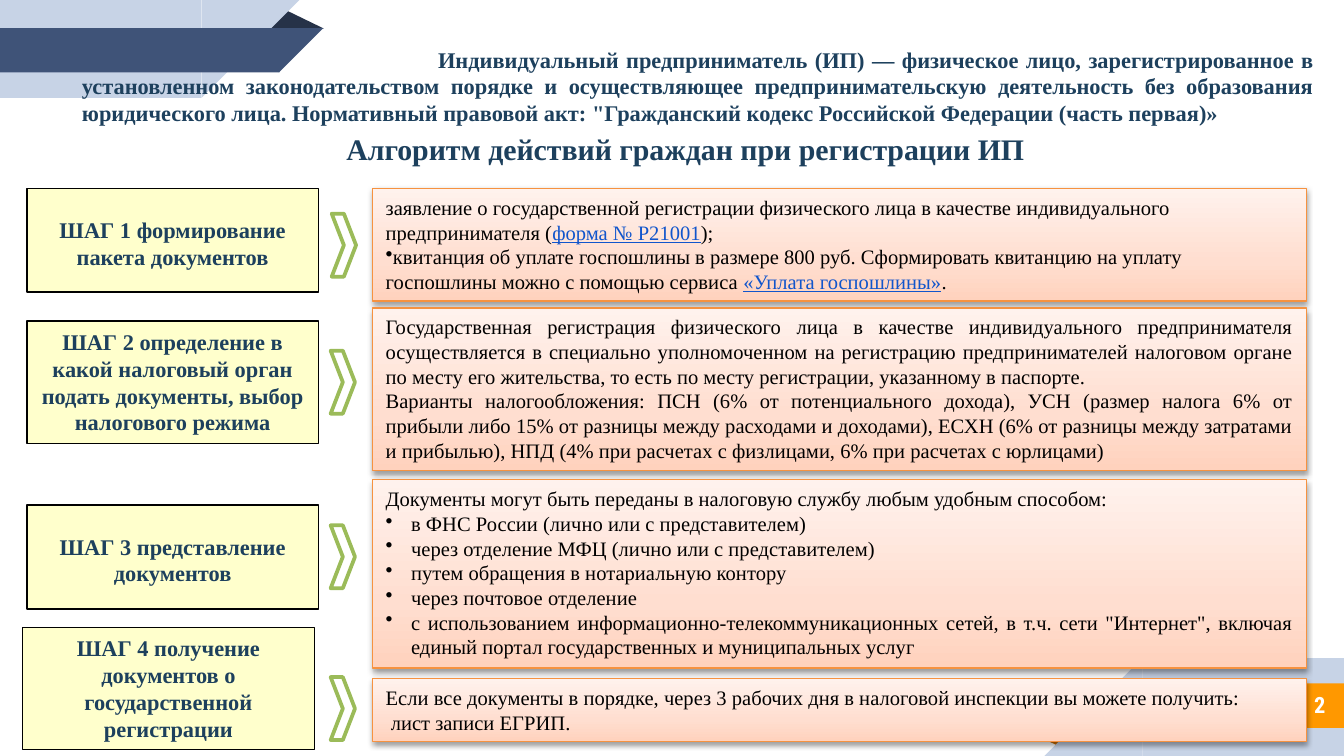
from lxml.etree import SubElement
from pptx import Presentation
from pptx.dml.color import RGBColor
from pptx.enum.shapes import MSO_SHAPE
from pptx.enum.text import MSO_ANCHOR, PP_ALIGN
from pptx.oxml.ns import qn
from pptx.util import Cm, Pt

SLIDE_W, SLIDE_H = 25.4, 14.29
SERIF = "Times New Roman"
NAVY, LINK = "1D405D", "1155CC"
STEP_W, DETAIL_LEFT, DETAIL_W = 5.51, 7.04, 17.65
BULLET_INDENT = 0.48

LEAD = (
    "Индивидуальный предприниматель (ИП) — физическое лицо, зарегистрированное в "
    "установленном законодательством порядке и осуществляющее предпринимательскую "
    "деятельность без образования юридического лица. Нормативный правовой акт: "
    '"Гражданский кодекс Российской Федерации (часть первая)»'
)
HEADING = "Алгоритм действий граждан при регистрации ИП"

# Step: left, top, height, top margin, text
STEPS = [
    (0.51, 3.56, 1.96, 0.52, "ШАГ 1 формирование пакета документов"),
    (0.51, 6.07, 2.31, 0.13,
     "ШАГ 2 определение в какой налоговый орган подать документы, выбор налогового режима"),
    (0.51, 9.55, 1.96, 0.52, "ШАГ 3 представление документов"),
    (0.43, 11.86, 2.31, 0.13, "ШАГ 4 получение документов о государственной регистрации"),
]

# Detail: top, height, alignment, paragraphs as (bullet indent or None, pieces);
# every second piece of a paragraph is styled as a link
DETAILS = [
    (3.56, 2.13, PP_ALIGN.LEFT, [
        (None, ["заявление о государственной регистрации физического лица в качестве "
                "индивидуального предпринимателя (", "форма № Р21001", ");"]),
        (0, ["квитанция об уплате госпошлины в размере 800 руб. Сформировать квитанцию "
             "на уплату госпошлины можно с помощью сервиса ", "«Уплата госпошлины»", "."]),
    ]),
    (5.82, 3.07, PP_ALIGN.JUSTIFY, [
        (None, ["Государственная регистрация физического лица в качестве индивидуального "
                "предпринимателя осуществляется в специально уполномоченном на регистрацию "
                "предпринимателей налоговом органе по месту его жительства, то есть по "
                "месту регистрации, указанному в паспорте."]),
        (None, ["Варианты налогообложения: ПСН (6% от потенциального дохода), УСН (размер "
                "налога 6% от прибыли либо 15% от разницы между расходами и доходами), ЕСХН "
                "(6% от разницы между затратами и прибылью), НПД (4% при расчетах с "
                "физлицами, 6% при расчетах с юрлицами)"]),
    ]),
    (9.07, 3.56, PP_ALIGN.JUSTIFY, [
        (None, ["Документы могут быть переданы в налоговую службу любым удобным способом:"]),
        (BULLET_INDENT, ["в ФНС России (лично или с представителем)"]),
        (BULLET_INDENT, ["через отделение МФЦ (лично или с представителем)"]),
        (BULLET_INDENT, ["путем обращения в нотариальную контору"]),
        (BULLET_INDENT, ["через почтовое отделение"]),
        (BULLET_INDENT, ["с использованием информационно-телекоммуникационных сетей, в т.ч. "
                         'сети "Интернет", включая единый портал государственных и '
                         "муниципальных услуг"]),
    ]),
    (12.83, 1.19, PP_ALIGN.LEFT, [
        (None, ["Если все документы в порядке, через 3 рабочих дня в налоговой инспекции "
                "вы можете получить:"]),
        (None, [" лист записи ЕГРИП."]),
    ]),
]

# Chevron: left, top
CHEVRONS = [(6.27, 4.04), (6.25, 6.63), (6.25, 9.93), (6.25, 12.8)]

# Corner ornament: preset, left, top, width, height, top colour, bottom colour
ORNAMENT = [
    (MSO_SHAPE.ISOSCELES_TRIANGLE, 5.03, 0.18, 1.09, 0.36, "263248", "D26F00"),
    (MSO_SHAPE.RECTANGLE, 0, 0, 3.81, 1.85, "C7D3E6", "C7D3E6"),
    (MSO_SHAPE.RIGHT_TRIANGLE, 3.81, 0, 1.85, 1.85, "C7D3E6", "C7D3E6"),
    (MSO_SHAPE.RECTANGLE, 0, 0.53, 5.28, 0.84, "3F5378", "FF9800"),
    (MSO_SHAPE.RIGHT_TRIANGLE, 5.27, 0.53, 0.84, 0.84, "3F5378", "FF9800"),
]


def rgb(code):
    return RGBColor.from_string(code)


def add_figure(slide, preset, left, top, width, height, fill, line=None, line_width=0.75):
    figure = slide.shapes.add_shape(preset, Cm(left), Cm(top), Cm(width), Cm(height))
    figure.shadow.inherit = False
    figure.fill.solid()
    figure.fill.fore_color.rgb = rgb(fill)
    if line:
        figure.line.color.rgb = rgb(line)
        figure.line.width = Pt(line_width)
    else:
        figure.line.fill.background()
    return figure


def style_runs(paragraph, size, color, bold=False, font=SERIF):
    for run in paragraph.runs:
        run.font.name = font
        run.font.size = Pt(size)
        run.font.bold = bold
        run.font.color.rgb = rgb(color)


def add_label(slide, left, top, width, height, text, size, align,
              color=NAVY, font=SERIF, anchor=MSO_ANCHOR.TOP):
    label = slide.shapes.add_textbox(Cm(left), Cm(top), Cm(width), Cm(height))
    frame = label.text_frame
    frame.word_wrap = True
    frame.vertical_anchor = anchor
    frame.text = text
    paragraph = frame.paragraphs[0]
    paragraph.alignment = align
    style_runs(paragraph, size, color, True, font)
    return paragraph


def add_corner(slide, at_bottom):
    """The bottom corner is the top one turned by half a circle."""
    for preset, left, top, width, height, top_color, bottom_color in ORNAMENT:
        is_tip = preset == MSO_SHAPE.ISOSCELES_TRIANGLE
        if at_bottom:
            left, top = SLIDE_W - left - width, SLIDE_H - top - height
        part = add_figure(slide, preset, left, top, width, height,
                          bottom_color if at_bottom else top_color)
        if is_tip:
            part.adjustments[0] = 0.32
        else:
            part._element.spPr.find(qn("a:xfrm")).set("flipH", "1")
        part.rotation = 180 if is_tip == at_bottom else 0


def add_step(slide, left, top, height, margin_top, text):
    step = add_figure(slide, MSO_SHAPE.RECTANGLE, left, top, STEP_W, height,
                      "FFFFCC", "000000")
    frame = step.text_frame
    frame.word_wrap = True
    frame.vertical_anchor = MSO_ANCHOR.TOP
    frame.margin_top = Cm(margin_top)
    frame.text = text
    frame.paragraphs[0].alignment = PP_ALIGN.CENTER
    style_runs(frame.paragraphs[0], 12, NAVY, True)


def add_color(parent, code):
    color = SubElement(parent, qn("a:srgbClr"))
    color.set("val", code)
    return color


def apply_glow_style(panel):
    # Three-stop gradient running upwards
    panel.fill.gradient()
    panel.fill.gradient_angle = 90
    stops = panel._element.spPr.find(".//" + qn("a:gsLst"))
    stops.clear()
    for position, code in [(0, "FFD2BD"), (35, "FFDED0"), (100, "FFF2ED")]:
        stop = SubElement(stops, qn("a:gs"))
        stop.set("pos", str(position * 1000))
        add_color(stop, code)
    # Soft shadow below
    effects = panel._element.spPr.find(qn("a:effectLst"))
    shadow = SubElement(effects, qn("a:outerShdw"))
    for key, value in [("blurRad", Pt(3.1)), ("dist", Pt(1.6)), ("dir", 90 * 60000)]:
        shadow.set(key, str(int(value)))
    shadow.set("rotWithShape", "0")
    SubElement(add_color(shadow, "000000"), qn("a:alpha")).set("val", "38000")


def add_bullet(paragraph, indent):
    properties = paragraph._p.get_or_add_pPr()
    properties.set("marL", str(Cm(indent)))
    properties.set("indent", str(-Cm(indent)))
    add_color(SubElement(properties, qn("a:buClr")), "000000")
    SubElement(properties, qn("a:buChar")).set("char", "•")


def add_detail(slide, top, height, align, paragraphs):
    panel = add_figure(slide, MSO_SHAPE.RECTANGLE, DETAIL_LEFT, top, DETAIL_W, height,
                       "FFF2ED", "F69240")
    apply_glow_style(panel)
    frame = panel.text_frame
    frame.word_wrap = True
    frame.vertical_anchor = MSO_ANCHOR.TOP
    for number, (indent, pieces) in enumerate(paragraphs):
        paragraph = frame.add_paragraph() if number else frame.paragraphs[0]
        paragraph.alignment = align
        if indent is not None:
            add_bullet(paragraph, indent)
        for piece in pieces:
            paragraph.add_run().text = piece
        style_runs(paragraph, 11, "000000")
        for link in paragraph.runs[1::2]:
            link.font.color.rgb = rgb(LINK)
            link.font.underline = True


def main():
    deck = Presentation()
    deck.slide_width, deck.slide_height = Cm(SLIDE_W), Cm(SLIDE_H)
    slide = deck.slides.add_slide(deck.slide_layouts[6])

    # Corners and page number
    add_corner(slide, at_bottom=True)
    add_corner(slide, at_bottom=False)
    add_label(slide, 21.16, 12.88, 4.14, 0.89, "2", 12, PP_ALIGN.RIGHT,
              "FFFFFF", "Roboto Condensed", MSO_ANCHOR.MIDDLE)

    # Definition and heading
    lead = add_label(slide, 1.3, 0.74, 23.8, 1.8, LEAD, 12, PP_ALIGN.JUSTIFY)
    lead._p.get_or_add_pPr().set("indent", str(Cm(6.73)))
    add_label(slide, 3.1, 2.34, 19.71, 0.94, HEADING, 16, PP_ALIGN.CENTER)

    # Steps, their details and the chevrons between them
    for step in STEPS:
        add_step(slide, *step)
    for detail in DETAILS:
        add_detail(slide, *detail)
    for left, top in CHEVRONS:
        add_figure(slide, MSO_SHAPE.CHEVRON, left, top, 0.46, 1.19, "FFFFFF", "9BBB59", 2)

    deck.save("out.pptx")


if __name__ == "__main__":
    main()
